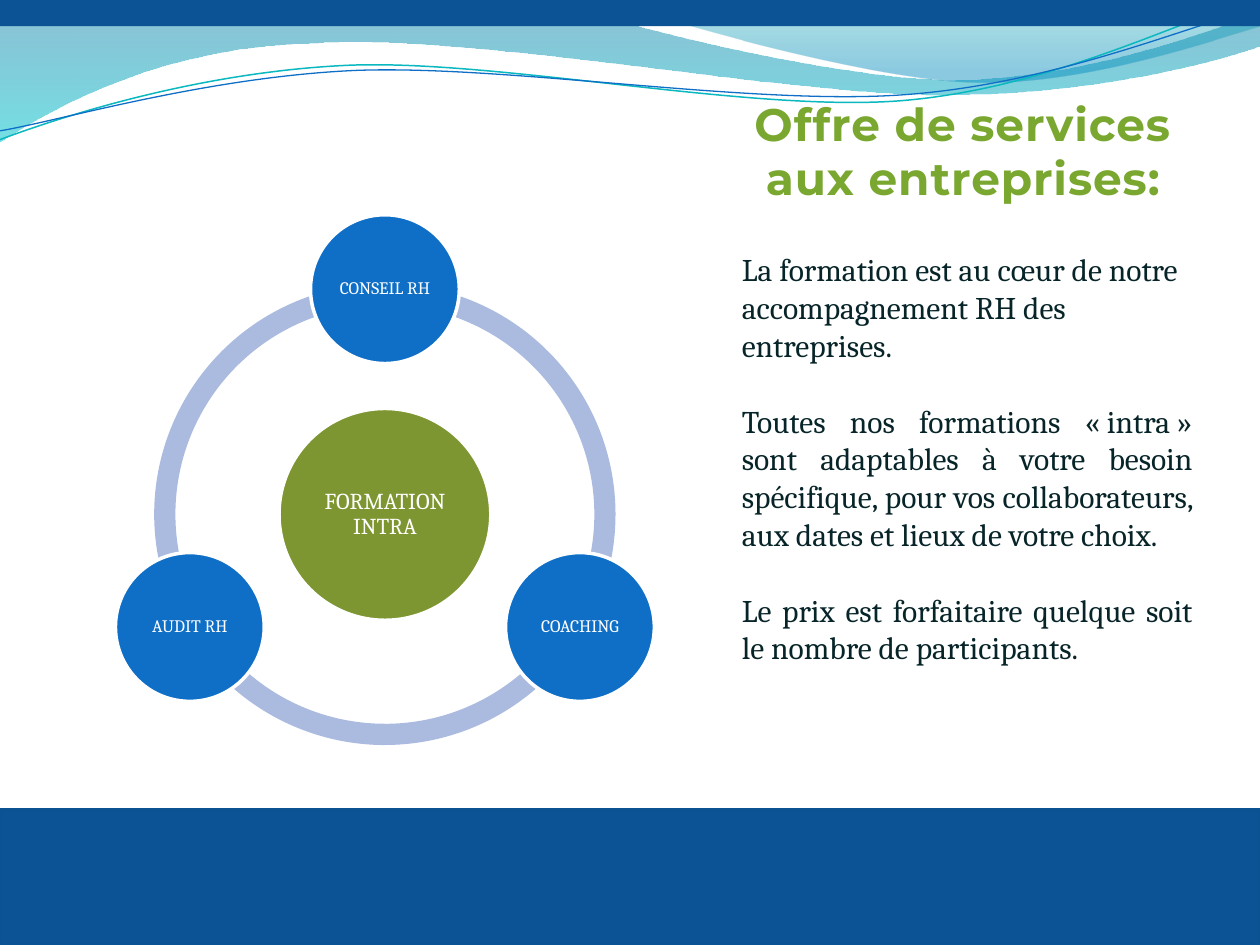
from dataclasses import dataclass
from math import cos, radians, sin

from pptx import Presentation
from pptx.dml.color import RGBColor
from pptx.enum.shapes import MSO_SHAPE as Shape
from pptx.enum.text import MSO_ANCHOR as Anchor, MSO_AUTO_SIZE as Fit, PP_ALIGN as Align
from pptx.oxml.ns import qn
from pptx.util import Cm, Pt


@dataclass(frozen=True)
class Theme:
    band: str = "0B5394"
    edge: str = "0B5292"
    title: str = "79A72F"
    body: str = "072428"
    ring: str = "ABBBDF"
    core: str = "7E9632"
    node: str = "0F6FC6"
    teal: str = "0AB8BF"
    white: str = "FFFFFF"
    head: str = "Montserrat"
    serif: str = "Cambria"
    title_size: float = 26
    body_size: float = 18
    core_size: float = 13
    node_size: float = 10


T = Theme()
WIDE, HIGH = 25.4, 19.05
HARD = chr(160)  # no-break space inside the French quotes

# Outlines in cm: a start point, then lines (2 numbers) or curves (6 numbers)
WAVES = [
    ([(0, 0), (11.18, -0.03),
      (12.09, 0.43, 16.87, 1.6, 19.25, 1.6),
      (21.67, 1.6, 24.33, 0.66, 25.4, 0.23), (25.43, 0.91),
      (24.97, 1.12, 22.1, 1.93, 18.95, 1.91),
      (15.8, 1.91, 9.7, 0.71, 6.53, 0.86),
      (3.28, 0.91, 1.17, 2.11, -0.03, 2.87)],
     [(0, "0074A1", 45), (1, "00C6CF", 55)]),
    ([(12.17, -0.03),
      (12.93, 0.28, 17.32, 1.57, 19.53, 1.65),
      (21.74, 1.75, 24.41, 0.81, 25.4, 0.53), (25.4, 0)],
     [(0, "00A1A9", 30), (0.8, "008BBF", 45)]),
]
TILT = -2.7
THREADS = [
    ([(-0.06, 2.22), (1.18, 1.82, 4.01, 1.04, 7.05, 1.05),
      (10.04, 1.07, 15.02, 2.37, 18.08, 2.29),
      (21.14, 2.2, 23.88, 0.91, 25.42, 0.55)], T.teal, 0.85),
    ([(-0.05, 2.04), (1.15, 1.9, 4.17, 1.15, 7.19, 1.16),
      (10.25, 1.19, 15.13, 2.25, 18.19, 2.17),
      (21.22, 2.1, 23.95, 1.06, 25.46, 0.75)], T.node, 0.75),
]
BODY = [
    ("La formation est au cœur de notre accompagnement RH des entreprises.", Align.LEFT),
    (f"Toutes nos formations «{HARD}intra{HARD}» sont adaptables à votre besoin "
     "spécifique, pour vos collaborateurs, aux dates et lieux de votre choix.",
     Align.JUSTIFY),
    ("Le prix est forfaitaire quelque soit le nombre de participants.", Align.JUSTIFY),
]


def rgb(color):
    return RGBColor.from_string(color)


def paint(shape, fill=None, line=None, width=1):
    shape.shadow.inherit = False
    if fill:
        shape.fill.solid()
        shape.fill.fore_color.rgb = rgb(fill)
    else:
        shape.fill.background()
    if line:
        shape.line.color.rgb = rgb(line)
        shape.line.width = Pt(width)
    else:
        shape.line.fill.background()


def place(shape, left, top, width, height):
    shape.left, shape.top = Cm(left), Cm(top)
    shape.width, shape.height = Cm(width), Cm(height)


def style(para, font, size, color, align, bold=False):
    para.alignment = align
    for run in para.runs:
        run.font.name, run.font.size, run.font.bold = font, Pt(size), bold
        run.font.color.rgb = rgb(color)


def add_path(slide, path, close):
    start, *parts = path
    pen = slide.shapes.build_freeform(Cm(start[0]), Cm(start[1]), scale=1.0)
    points = [(Cm(p[i]), Cm(p[i + 1])) for p in parts for i in range(0, len(p), 2)]
    pen.add_line_segments(points, close=close)
    shape = pen.convert_to_shape()
    # Merge the three points of each curve into one Bézier segment
    lines = iter(list(shape.element.spPr.iter(qn("a:lnTo"))))
    for part in parts:
        line = next(lines)
        if len(part) == 6:
            curve = line.makeelement(qn("a:cubicBezTo"), {})
            line.addprevious(curve)
            for item in (line, next(lines), next(lines)):
                curve.append(item[0])
                item.getparent().remove(item)
    return shape


def add_wave(slide, path, stops):
    wave = add_path(slide, path, True)
    paint(wave)
    wave.fill.gradient()
    wave.fill.gradient_angle = 270
    for stop, (spot, color, _) in zip(wave.fill.gradient_stops, stops):
        stop.position, stop.color.rgb = spot, rgb(color)
    # Opacity of each stop
    tints = list(wave.element.spPr.iter(qn("a:srgbClr")))
    for tint, (_, _, alpha) in zip(tints, stops):
        tint.append(tint.makeelement(qn("a:alpha"), {"val": str(alpha * 1000)}))


def add_thread(slide, path, color, width):
    thread = add_path(slide, path, False)
    paint(thread, None, color, width)
    thread.rotation = TILT


def add_band(slide, top, height, line=None):
    band = slide.shapes.add_shape(Shape.RECTANGLE, 0, Cm(top), Cm(WIDE), Cm(height))
    paint(band, T.band, line, 2)


def add_round(slide, kind, x, y, size):
    return slide.shapes.add_shape(kind, Cm(x - size / 2), Cm(y - size / 2),
                                  Cm(size), Cm(size))


def add_disc(slide, x, y, size, text, fill, points):
    disc = add_round(slide, Shape.OVAL, x, y, size)
    paint(disc, fill, T.white, 2)
    frame = disc.text_frame
    frame.word_wrap, frame.vertical_anchor = True, Anchor.MIDDLE
    frame.margin_left = frame.margin_right = Cm(0.04)
    frame.margin_top = frame.margin_bottom = Cm(0.04)
    frame.text = text
    frame.paragraphs[0].line_spacing = 0.9
    style(frame.paragraphs[0], T.serif, points, T.white, Align.CENTER)


def add_cycle(slide, x, y):
    # Ring in three arcs
    for start, end in [(90, 162), (18, 90), (162, 18)]:
        arc = add_round(slide, Shape.BLOCK_ARC, x, y, 9.3)
        for i, value in enumerate((start * 0.6, end * 0.6, 0.046)):
            arc.adjustments[i] = value
        paint(arc, T.ring)
    # Centre, then the nodes at equal angles
    add_disc(slide, x, y, 4.27, "FORMATION INTRA", T.core, T.core_size)
    reach = 4.54
    for i, name in enumerate(["CONSEIL RH", "COACHING", "AUDIT RH"]):
        turn = radians(120 * i - 90)
        add_disc(slide, x + reach * cos(turn), y + reach * sin(turn), 3,
                 name, T.node, T.node_size)


def set_title(title):
    place(title, 14.71, 0.53, 9.6, 4.6)
    frame = title.text_frame
    frame.text = "Offre de services aux entreprises:"
    frame.auto_size, frame.word_wrap = Fit.NONE, True
    frame.vertical_anchor = Anchor.TOP
    frame.margin_left, frame.margin_right = 0, Cm(0.19)
    frame.margin_top = Cm(1.4)
    para = frame.paragraphs[0]
    para.space_before = Pt(0)
    style(para, T.head, T.title_size, T.title, Align.CENTER, True)
    para.runs[0]._r.get_or_add_rPr().set("spc", "50")


def set_body(body):
    place(body, 14.7, 4.92, 9.6, 11.02)
    frame = body.text_frame
    frame.text = "\n".join(text for text, _ in BODY)
    frame.auto_size, frame.word_wrap = Fit.NONE, True
    frame.vertical_anchor = Anchor.TOP
    for i, (para, (_, align)) in enumerate(zip(frame.paragraphs, BODY)):
        style(para, T.serif, T.body_size, T.body, align)
        para.space_before = Pt(21.6 if i else 0)
        # No bullet, no indent
        props = para._p.get_or_add_pPr()
        props.set("marL", "0")
        props.set("indent", "0")
        props.append(props.makeelement(qn("a:buNone"), {}))


def main():
    deck = Presentation()
    deck.slide_width, deck.slide_height = Cm(WIDE), Cm(HIGH)
    slide = deck.slides.add_slide(deck.slide_layouts[1])
    slide.background.fill.solid()
    slide.background.fill.fore_color.rgb = rgb(T.white)

    # Waves and bands
    for path, stops in WAVES:
        add_wave(slide, path, stops)
    for path, color, width in THREADS:
        add_thread(slide, path, color, width)
    add_band(slide, 16.33, 2.72, T.edge)
    add_band(slide, 0, 0.53)

    # Text and diagram
    set_title(slide.shapes.title)
    set_body(slide.placeholders[1])
    add_cycle(slide, 7.76, 10.37)
    deck.save("out.pptx")


if __name__ == "__main__":
    main()
